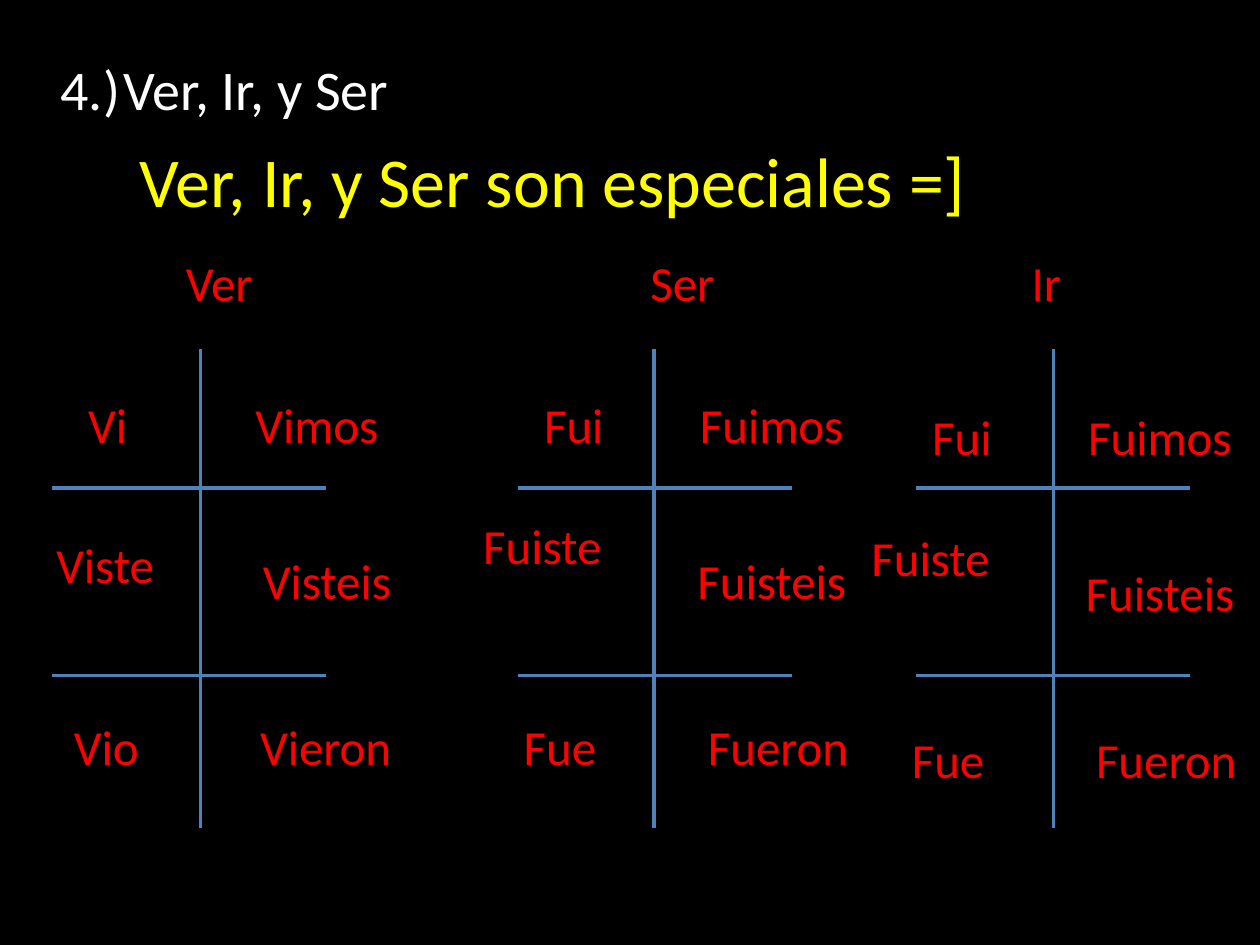
from pptx import Presentation
from pptx.dml.color import RGBColor
from pptx.enum.shapes import MSO_CONNECTOR as Conn
from pptx.enum.text import MSO_ANCHOR as Anchor, PP_ALIGN as Align
from pptx.oxml.ns import qn
from pptx.util import Pt
from lxml.etree import SubElement

FONT = "Calibri"
WHITE, YELLOW, RED, BLUE = "FFFFFF", "FFFF00", "FF0000", "4F81BD"
FORM_W, TEXT_H = 149, 41
STEM_TOP, STEM_END = 199.4, 473
BAR_W, BAR_YS = 156.8, (278.8, 386)

VER = [
    ("Vi", -13, 221.8), ("Viste", -14.4, 301.7), ("Vio", -13.7, 406.1),
    ("Vimos", 106.6, 221.8), ("Visteis", 112.3, 311), ("Vieron", 111.6, 406.1),
]
SER = [
    ("Fui", 253.4, 221.8), ("Fuiste", 235.4, 290.9), ("Fue", 245.5, 406.1),
    ("Fuimos", 366.5, 221.8), ("Fuisteis", 366.5, 311), ("Fueron", 370.1, 406.1),
]
# Ir shares the forms of Ser, moved right and slightly down
IR = [(word, x + 221.8, y + 7.2) for word, x, y in SER]

# verb, left edge, heading width, stem x, forms
VERBS = [
    ("Ver", 29.5, 191.5, 114.5, VER),
    ("Ser", 295.9, 187.9, 373.7, SER),
    ("Ir", 523.4, 149, 601.9, IR),
]


def color(code):
    return RGBColor.from_string(code)


def place(shape, x, y, w, h):
    shape.left, shape.top, shape.width, shape.height = map(Pt, (x, y, w, h))


def write(shape, text, size, code, align):
    frame = shape.text_frame
    frame.word_wrap = True
    frame.vertical_anchor = Anchor.TOP
    para = frame.paragraphs[0]
    para.alignment = align
    run = para.add_run()
    run.text = text
    run.font.name = FONT
    run.font.size = Pt(size)
    run.font.color.rgb = color(code)


def label(text, x, y, w, h=TEXT_H, size=28, code=RED, align=Align.CENTER):
    box = slide.shapes.add_textbox(Pt(x), Pt(y), Pt(w), Pt(h))
    write(box, text, size, code, align)


def rule(x1, y1, x2, y2):
    line = slide.shapes.add_connector(Conn.STRAIGHT, Pt(x1), Pt(y1), Pt(x2), Pt(y2))
    line.line.color.rgb = color(BLUE)
    line.line.width = Pt(2)
    SubElement(line._element.spPr, qn("a:effectLst"))


deck = Presentation()
deck.slide_width, deck.slide_height = Pt(720), Pt(540)
slide = deck.slides.add_slide(deck.slide_layouts[5])
slide.background.fill.solid()
slide.background.fill.fore_color.rgb = color("000000")

title = slide.shapes.title
place(title, 27.4, 27.4, 675.4, 46)
write(title, "4.)\tVer, Ir, y Ser", 32, WHITE, Align.LEFT)
label("Ver, Ir, y Ser son especiales =]", 72.7, 74.9, 630, 77.8, 40, YELLOW, Align.LEFT)

for verb, left, width, stem, forms in VERBS:
    rule(stem, STEM_TOP, stem, STEM_END)
    for y in BAR_YS:
        rule(left, y, left + BAR_W, y)
    label(verb, left, 140.6, width)
    for word, x, y in forms:
        label(word, x, y, FORM_W)

deck.save("out.pptx")
